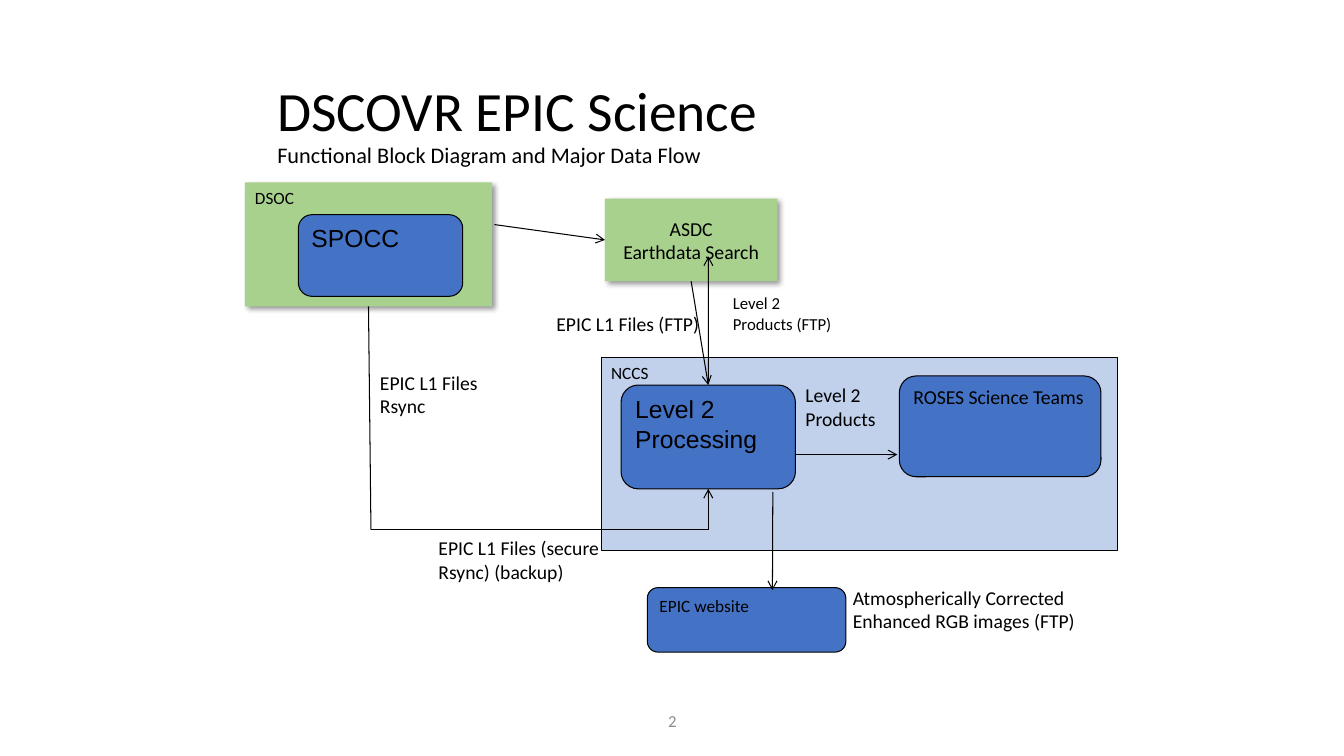
"""Build the functional block diagram of the DSCOVR EPIC data flow."""
from dataclasses import dataclass

from lxml import etree
from pptx import Presentation
from pptx.dml.color import RGBColor
from pptx.enum.shapes import MSO_CONNECTOR, MSO_SHAPE
from pptx.enum.text import MSO_ANCHOR, MSO_AUTO_SIZE, PP_ALIGN
from pptx.oxml.ns import qn
from pptx.util import Inches, Pt

RECT, ROUND = MSO_SHAPE.RECTANGLE, MSO_SHAPE.ROUNDED_RECTANGLE
ALT = MSO_SHAPE.FLOWCHART_ALTERNATE_PROCESS
STRAIGHT, ELBOW = MSO_CONNECTOR.STRAIGHT, MSO_CONNECTOR.ELBOW
TOP, MIDDLE = MSO_ANCHOR.TOP, MSO_ANCHOR.MIDDLE
LEFT, CENTER = PP_ALIGN.LEFT, PP_ALIGN.CENTER


@dataclass(frozen=True)
class Theme:
    """Colours, fonts and type sizes of the slide."""
    ink: str = "000000"
    mute: str = "8C8C8C"
    green: str = "A9D18E"
    blue: str = "4472C4"
    sans: str = "Calibri"
    bold: str = "Arial"
    head: float = 39.6
    sub: float = 15.9
    large: float = 17.6
    mid: float = 14.1
    label: float = 14
    tiny: float = 12.3
    small: float = 12
    rule: float = 0.75


T = Theme()
CELL = 0.1

TITLE = ["DSCOVR EPIC Science", "Functional Block Diagram and Major Data Flow"]
HEAD = (26.5, 8.9, 88.2, 7.2)
PAGE = ("2", (44.2, 69.5, 45, 4))

SITE = dict(fill=T.green, shade=True, pad=(1, 0.5))
NODE = dict(fill=T.blue, pad=(0.9, 0.4))
BLOCKS = {
    "dsoc": (RECT, (24.3, 18.1, 24.5, 12.3), ["DSOC"], SITE, dict(size=T.tiny)),
    "nccs": (RECT, (59.7, 35.5, 51.1, 19.1), ["NCCS"], dict(NODE, alpha=33),
             dict(size=T.tiny)),
    "spocc": (ALT, (29.6, 21.3, 16.3, 8.1), ["SPOCC"], NODE,
              dict(size=T.large, font=T.bold)),
    "level": (ROUND, (61.6, 38.2, 17.3, 10.3), ["Level 2 Processing"], NODE,
              dict(size=T.large, font=T.bold)),
    "roses": (ALT, (89.2, 37.3, 20, 10), ["ROSES Science Teams"], NODE,
              dict(size=T.mid)),
    "web": (ROUND, (64.2, 58.3, 19.7, 6.4), ["EPIC website"], NODE,
            dict(size=T.tiny)),
    "asdc": (RECT, (60, 19.7, 17.1, 8.2), ["ASDC", "Earthdata Search"], SITE,
             dict(size=T.mid, align=CENTER, anchor=MIDDLE)),
}

LABELS = [
    (["Level 2 Products"], (78.9, 37.5, 9.4, 5.7), {}),
    (["EPIC L1 Files (FTP)"], (54.2, 30.5, 16.3, 3.4), dict(wrap=False)),
    (["Level 2", "Products (FTP)"], (71.7, 28.6, 15.7, 5), dict(size=T.small)),
    (["EPIC L1 Files (secure Rsync) (backup)"], (42.5, 52.7, 20.9, 5.7), {}),
    (["Atmospherically Corrected Enhanced RGB images (FTP)"],
     (83.6, 57.6, 28.6, 5.7), {}),
    (["EPIC L1 Files", "Rsync"], (36.7, 36.3, 11.8, 5.7), dict(wrap=False)),
]

LINKS = [
    (STRAIGHT, ("level", 1, 0.67), ("roses", -0.01, 0.78), True),
    (ELBOW, ("dsoc", 0.51, 2.8), ("level", 0.5, 1), True),
    (STRAIGHT, ("level", 0.87, 1.03), ("web", 0.63, 0.04), True),
    (STRAIGHT, ("dsoc", 1.01, 0.34), ("asdc", 0, 0.5), True),
    (STRAIGHT, ("asdc", 0.5, 1), ("level", 0.5, 0), True),
    (STRAIGHT, ("level", 0.5, -0.04), ("asdc", 0.6, 0.7), True),
    (STRAIGHT, ("dsoc", 0.51, 2.8), ("dsoc", 0.5, 1), False),
]


def grid(*cells):
    """Turn grid cells into lengths."""
    return [Inches(c * CELL) for c in cells]


def tint(name):
    """Turn a hex name into a colour."""
    return RGBColor.from_string(name)


def node(root, tag, **attrs):
    """Add one drawing element."""
    return etree.SubElement(root, qn(tag), {k: str(v) for k, v in attrs.items()})


def style(font, size, color, face):
    """Format one font."""
    font.size, font.name = Pt(size), face
    font.color.rgb = tint(color)


def write(frame, lines, size=T.label, font=T.sans, color=T.ink, align=LEFT,
          anchor=TOP, wrap=True):
    """Fill a text frame with formatted paragraphs."""
    frame.word_wrap, frame.vertical_anchor = wrap, anchor
    for i, line in enumerate(lines):
        para = frame.add_paragraph() if i else frame.paragraphs[0]
        para.alignment = align
        run = para.add_run()
        run.text = line
        style(run.font, size, color, font)


def title(slide):
    """Place the title and its second line."""
    box = slide.shapes.title
    box.left, box.top, box.width, box.height = grid(*HEAD)
    frame = box.text_frame
    frame.auto_size = MSO_AUTO_SIZE.NONE
    write(frame, TITLE[:1], size=T.head, anchor=MIDDLE)
    para = frame.paragraphs[0]
    para.line_spacing = 0.9
    para.add_line_break()
    run = para.add_run()
    run.text = TITLE[1]
    style(run.font, T.sub, T.ink, T.sans)


def block(slide, kind, area, lines, look, text):
    """Draw one block of the diagram."""
    box = slide.shapes.add_shape(kind, *grid(*area))
    box.shadow.inherit = False
    box.fill.solid()
    box.fill.fore_color.rgb = tint(look["fill"])
    props = box._element.spPr
    if "alpha" in look:
        paint = props.find(qn("a:solidFill"))
        node(paint[0], "a:alpha", val=look["alpha"] * 1000)
    if "shade" in look:
        box.line.fill.background()
        cast = node(props.find(qn("a:effectLst")), "a:outerShdw", blurRad=Pt(4),
                    dist=Pt(3), dir=45 * 60000, algn="tl", rotWithShape=0)
        node(node(cast, "a:srgbClr", val=T.ink), "a:alpha", val=40000)
    else:
        box.line.color.rgb, box.line.width = tint(T.ink), Pt(T.rule)
    frame = box.text_frame
    side, edge = grid(*look["pad"])
    frame.margin_left = frame.margin_right = side
    frame.margin_top = frame.margin_bottom = edge
    write(frame, lines, **text)


def label(slide, lines, area, **text):
    """Add one free text."""
    write(slide.shapes.add_textbox(*grid(*area)).text_frame, lines, **text)


def spot(name, across, down):
    """Find a point given as shares of a block."""
    x, y, w, h = BLOCKS[name][1]
    return grid(x + w * across, y + h * down)


def link(slide, kind, start, end, arrow):
    """Join two points with a line."""
    wire = slide.shapes.add_connector(kind, *spot(*start), *spot(*end))
    wire.line.color.rgb, wire.line.width = tint(T.ink), Pt(T.rule)
    props = wire._element.spPr
    if kind == ELBOW:
        props.find(qn("a:prstGeom")).set("prst", "bentConnector2")
    if arrow:
        node(props.find(qn("a:ln")), "a:tailEnd", type="arrow")
    node(props, "a:effectLst")


def main():
    """Build and save the slide."""
    deck = Presentation()
    deck.slide_width, deck.slide_height = Inches(13.33), Inches(7.5)
    slide = deck.slides.add_slide(deck.slide_layouts[5])
    title(slide)
    for item in BLOCKS.values():
        block(slide, *item)
    for lines, area, text in LABELS:
        label(slide, lines, area, **text)
    label(slide, [PAGE[0]], PAGE[1], size=T.small, color=T.mute, align=CENTER,
          anchor=MIDDLE)
    for item in LINKS:
        link(slide, *item)
    deck.save("out.pptx")


if __name__ == "__main__":
    main()
